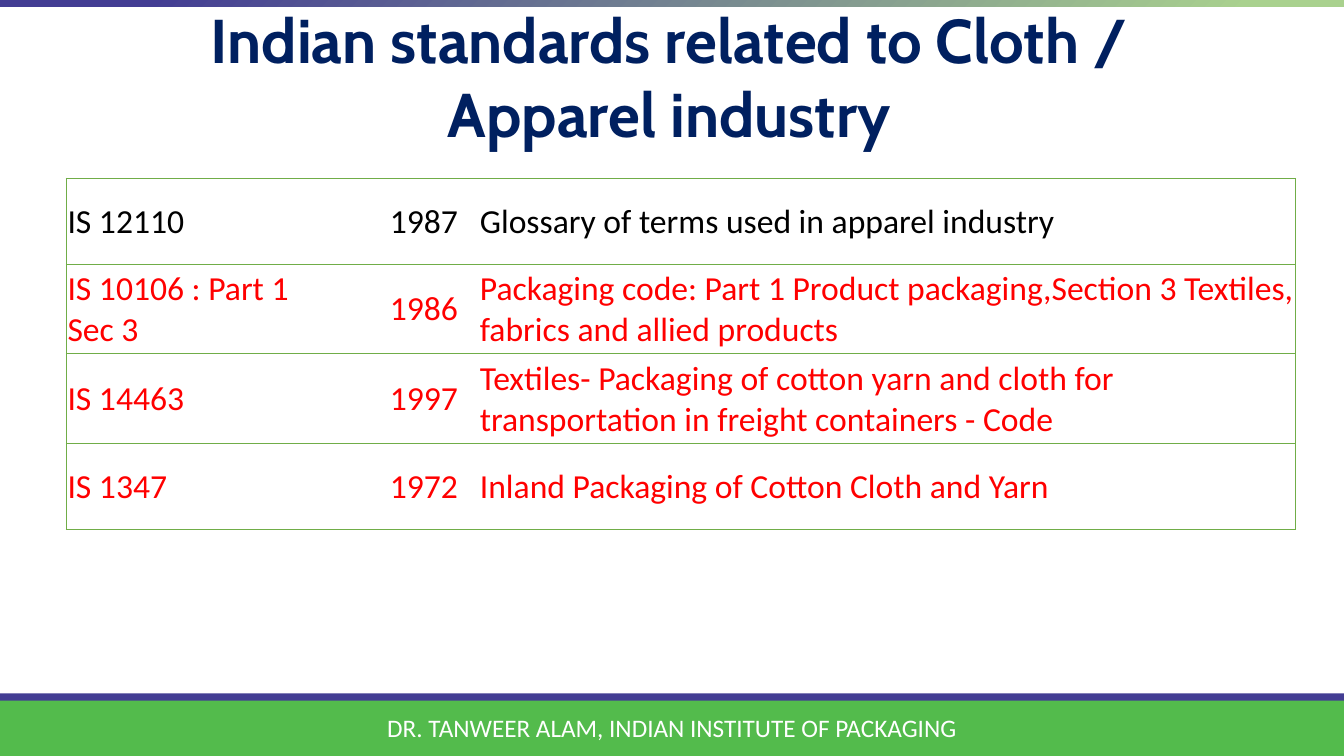
from lxml.etree import SubElement
from pptx import Presentation
from pptx.dml.color import RGBColor
from pptx.enum.shapes import MSO_SHAPE
from pptx.enum.text import MSO_ANCHOR, MSO_AUTO_SIZE, PP_ALIGN
from pptx.oxml.ns import qn
from pptx.util import Pt

PX = 9144  # 100 px to the inch
COLORS = {
    "white": "FFFFFF", "black": "000000", "red": "FF0000", "navy": "002060",
    "purple": "433D93", "green": "53BB4C", "pale_green": "A9D18E",
    "border": "70AD47",
}
STANDARDS = [
    ("IS 12110", "1987", "Glossary of terms used in apparel industry"),
    ("IS 10106 : Part 1\nSec 3", "1986",
     "Packaging code: Part 1 Product packaging,Section 3 Textiles, "
     "fabrics and allied products"),
    ("IS 14463", "1997",
     "Textiles- Packaging of cotton yarn and cloth for transportation "
     "in freight containers - Code"),
    ("IS 1347", "1972", "Inland Packaging of Cotton Cloth and Yarn"),
]
COL_WIDTHS = [300, 109, 810]
ROW_HEIGHTS = [85, 89, 89, 85]


def rgb(name):
    return RGBColor.from_string(COLORS[name])


class StandardsSlide:
    title_font = {"name": "Cabin", "size": Pt(44.1), "bold": True}
    footer_font = {"name": "Calibri", "size": Pt(18)}
    table_font = {"name": "Calibri", "size": Pt(24)}

    def __init__(self, prs):
        self.s = prs.slides.add_slide(prs.slide_layouts[5])

    def set_text(self, tf, text, font, color, align):
        tf.text = text
        for p in tf.paragraphs:
            p.alignment = align
            for r in p.runs:
                for key, value in font.items():
                    setattr(r.font, key, value)
                r.font.color.rgb = rgb(color)

    def bar(self, box, *colors):
        """Add a full-width bar: one colour is solid, two make a gradient."""
        sp = self.s.shapes.add_shape(MSO_SHAPE.RECTANGLE, *(v * PX for v in box))
        sp.shadow.inherit = False
        sp.line.fill.background()
        if len(colors) == 1:
            sp.fill.solid()
            sp.fill.fore_color.rgb = rgb(colors[0])
            return
        sp.fill.gradient()
        sp.fill.gradient_angle = 315
        for stop, color, position in zip(sp.fill.gradient_stops, colors, (0.11, 0.93)):
            stop.color.rgb = rgb(color)
            stop.position = position

    def title(self, box, text):
        sp = self.s.shapes.title
        sp.left, sp.top, sp.width, sp.height = (v * PX for v in box)
        tf = sp.text_frame
        tf.auto_size = MSO_AUTO_SIZE.NONE
        tf.vertical_anchor = MSO_ANCHOR.MIDDLE
        self.set_text(tf, text, self.title_font, "navy", PP_ALIGN.CENTER)

    def footer(self, box, text):
        tf = self.s.shapes.add_textbox(*(v * PX for v in box)).text_frame
        tf.word_wrap = True
        self.set_text(tf, text, self.footer_font, "white", PP_ALIGN.CENTER)

    def cell_borders(self, cell, shown):
        """Draw the edges in shown (letters of LRTB) and clear the others."""
        tc_pr = cell._tc.get_or_add_tcPr()
        for i, edge in enumerate("LRTB"):
            ln = SubElement(tc_pr, qn(f"a:ln{edge}"), w=str(Pt(1)))
            tc_pr.insert(i, ln)
            if edge in shown:
                fill = SubElement(ln, qn("a:solidFill"))
                SubElement(fill, qn("a:srgbClr"), val=COLORS["border"])
            else:
                SubElement(ln, qn("a:noFill"))

    def table(self, left, top, rows):
        table = self.s.shapes.add_table(
            len(rows), len(COL_WIDTHS), left * PX, top * PX,
            sum(COL_WIDTHS) * PX, sum(ROW_HEIGHTS) * PX).table
        table.first_row = table.horz_banding = False
        for column, width in zip(table.columns, COL_WIDTHS):
            column.width = width * PX
        for row, height in zip(table.rows, ROW_HEIGHTS):
            row.height = height * PX
        cell_format = {
            "margin_left": PX, "margin_right": PX, "margin_top": PX,
            "margin_bottom": 0, "vertical_anchor": MSO_ANCHOR.MIDDLE,
        }
        aligns = (PP_ALIGN.LEFT, PP_ALIGN.CENTER, PP_ALIGN.LEFT)
        edges = ("LTB", "TB", "RTB")
        for i, row in enumerate(rows):
            for j, text in enumerate(row):
                cell = table.cell(i, j)
                for key, value in cell_format.items():
                    setattr(cell, key, value)
                cell.fill.solid()
                cell.fill.fore_color.rgb = rgb("white")
                self.cell_borders(cell, edges[j])
                color = "red" if i else "black"
                self.set_text(cell.text_frame, text, self.table_font, color, aligns[j])


def main():
    prs = Presentation()
    prs.slide_width, prs.slide_height = 1333 * PX, 750 * PX
    slide = StandardsSlide(prs)
    slide.bar((0, 688, 1333, 28), "purple")
    slide.bar((0, 695, 1333, 55), "green")
    slide.bar((0, 0, 1333, 7), "purple", "pale_green")
    slide.footer((333, 702, 667, 40), "DR. TANWEER ALAM, INDIAN INSTITUTE OF PACKAGING")
    slide.title((89, 22, 1150, 106), "Indian standards related to Cloth / Apparel industry")
    slide.table(66, 177, STANDARDS)
    prs.save("out.pptx")


if __name__ == "__main__":
    main()
